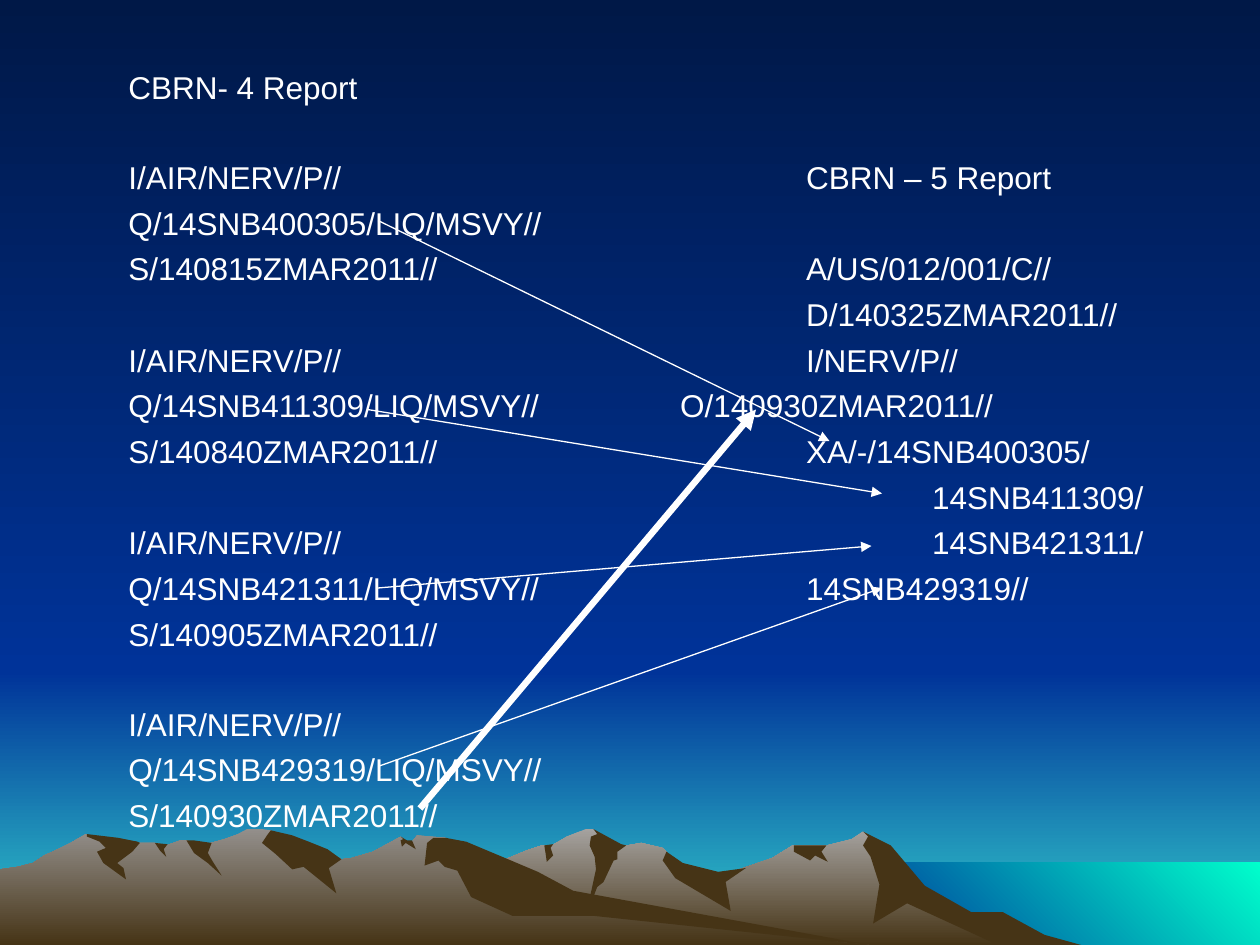
from collections import namedtuple

from lxml.etree import SubElement
from pptx import Presentation
from pptx.dml.color import RGBColor
from pptx.enum.shapes import MSO_CONNECTOR, MSO_SHAPE
from pptx.oxml.ns import qn
from pptx.util import Inches, Pt

Box = namedtuple("Box", "left top width height")

COLORS = {
    "night": "001847",
    "blue": "003399",
    "horizon": "33CCCC",
    "sea": "00FFCC",
    "far_peak": "A5A29F",
    "near_peak": "938F8B",
    "earth": "463416",
    "text": "FFFFFF",
}

DOWN, UP_RIGHT = 270, 45

# Mountain outlines on a grid of 858 columns and 92 rows
MOUNTAIN_COLS, MOUNTAIN_ROWS = 858, 92
FAR_RIDGE = [
    (802, 82), (778, 69), (764, 65), (723, 40), (702, 13), (685, 2), (676, 8), (656, 13),
    (629, 13), (613, 23), (566, 39), (536, 32), (529, 18), (526, 15), (509, 11), (486, 15),
    (474, 3), (471, 0), (465, 0), (450, 6), (438, 13), (430, 13), (418, 17), (394, 27),
    (355, 40), (327, 51), (277, 81), (258, 92), (821, 92),
]
FAR_SHADOWS = [
    [(796, 66), (771, 66), (734, 45), (707, 13), (685, 2), (689, 6), (685, 13), (691, 22),
     (698, 44), (693, 75), (720, 59), (792, 92), (858, 92), (829, 84)],
    [(471, 0), (474, 4), (469, 6), (468, 13), (472, 22), (473, 32), (465, 69), (474, 46),
     (479, 42), (487, 25), (490, 24), (490, 18), (497, 13), (493, 12)],
    [(529, 18), (526, 25), (536, 39), (580, 65), (576, 42), (592, 31), (570, 34), (542, 27)],
    [(650, 13), (630, 13), (630, 18), (643, 25), (647, 21), (657, 26), (652, 18), (656, 13)],
    [(433, 19), (432, 13), (439, 12), (437, 15), (439, 21), (434, 26)],
]
NEAR_RIDGE = [
    (690, 92), (667, 90), (432, 54), (354, 7), (331, 5), (327, 10), (323, 10), (318, 6),
    (296, 18), (279, 23), (271, 24), (260, 18), (236, 23), (223, 5), (215, 1), (208, 0),
    (196, 0), (189, 4), (178, 8), (160, 13), (148, 9), (143, 9), (132, 13), (123, 11),
    (111, 11), (94, 13), (68, 4), (56, 11), (46, 16), (35, 21), (26, 27), (14, 30),
    (0, 32), (0, 92),
]
NEAR_SHADOWS = [
    [(212, 5), (208, 11), (219, 20), (232, 32), (241, 30), (267, 51), (261, 31), (271, 24),
     (260, 16), (245, 10), (232, 5), (215, 1)],
    [(370, 10), (354, 7), (344, 7), (339, 11), (337, 29), (348, 25), (353, 30), (363, 33),
     (374, 54), (407, 69), (472, 69), (690, 92), (455, 49), (427, 34), (401, 23)],
    [(318, 9), (320, 8), (318, 6), (323, 9), (327, 9), (330, 16), (322, 11), (319, 14)],
    [(154, 9), (168, 11), (165, 19), (169, 26), (176, 37), (165, 27), (154, 19), (148, 9)],
    [(133, 12), (130, 16), (132, 22), (127, 17), (123, 11)],
    [(109, 10), (111, 11), (105, 18), (93, 27), (98, 31), (100, 40), (82, 27), (77, 18),
     (84, 15), (79, 10), (69, 6), (69, 4), (94, 7)],
]

# Each row: CBRN-4 entry, CBRN-5 entry, indent level of the latter; None is a gap
REPORT_ROWS = [
    ("CBRN- 4 Report", "", 0),
    None,
    ("I/AIR/NERV/P//", "CBRN – 5 Report", 1),
    ("Q/14SNB400305/LIQ/MSVY//", "", 0),
    ("S/140815ZMAR2011//", "A/US/012/001/C//", 1),
    ("", "D/140325ZMAR2011//", 1),
    ("I/AIR/NERV/P//", "I/NERV/P//", 1),
    ("Q/14SNB411309/LIQ/MSVY//", "O/140930ZMAR2011//", 0),
    ("S/140840ZMAR2011//", "XA/-/14SNB400305/", 1),
    ("", "14SNB411309/", 2),
    ("I/AIR/NERV/P//", "14SNB421311/", 2),
    ("Q/14SNB421311/LIQ/MSVY//", "14SNB429319//", 1),
    ("S/140905ZMAR2011//", "", 0),
    None,
    ("I/AIR/NERV/P//", "", 0),
    ("Q/14SNB429319/LIQ/MSVY//", "", 0),
    ("S/140930ZMAR2011//", "", 0),
]
FIRST_TAB, TAB_STEP = 4.38, 1
ROW_GAP, ROW_PITCH = 4.5, 25.2

# Arrow ends on a grid of 120 columns and 90 rows, with the line width
ARROW_COLS, ARROW_ROWS = 120, 90
ARROWS = [
    ((40, 77), (72, 39), 3.75),
    ((36, 21), (79, 42), 0.75),
    ((35, 39), (84, 47), 0.75),
    ((36, 56), (83, 52), 0.75),
    ((36, 73), (84, 56), 0.75),
]


def rgb(name):
    return RGBColor.from_string(COLORS[name])


def shade(fill, start, end, angle=DOWN):
    fill.gradient()
    fill.gradient_angle = angle
    for stop, name in zip(fill.gradient_stops, (start, end)):
        stop.color.rgb = rgb(name)


def band(slide, box, start, end, angle=DOWN):
    area = slide.shapes.add_shape(MSO_SHAPE.RECTANGLE, *box)
    area.shadow.inherit = False
    area.line.fill.background()
    shade(area.fill, start, end, angle)


def outline(slide, box, points):
    scale = (box.width / MOUNTAIN_COLS, box.height / MOUNTAIN_ROWS)
    builder = slide.shapes.build_freeform(*points[0], scale=scale)
    builder.add_line_segments(points[1:], close=True)
    rock = builder.convert_to_shape(box.left, box.top)
    rock.shadow.inherit = False
    rock.line.fill.background()
    return rock


def draw_sky_and_sea(slide, box):
    horizon = int(box.height * 0.71)
    sea_left, sea_top = int(box.width * 0.683), int(box.height * 0.913)
    shade(slide.background.fill, "night", "blue")
    band(slide, Box(box.left, box.top + horizon, box.width, box.height - horizon),
         "blue", "horizon")
    band(slide, Box(box.left, box.top, box.width, horizon), "night", "blue")
    band(slide, Box(box.left + sea_left, box.top + sea_top,
                    box.width - sea_left, box.height - sea_top),
         "blue", "sea", UP_RIGHT)


def draw_mountains(slide, box):
    for ridge, peak, shadows in ((FAR_RIDGE, "far_peak", FAR_SHADOWS),
                                 (NEAR_RIDGE, "near_peak", NEAR_SHADOWS)):
        shade(outline(slide, box, ridge).fill, peak, "earth")
        for points in shadows:
            shadow = outline(slide, box, points)
            shadow.fill.solid()
            shadow.fill.fore_color.rgb = rgb("earth")


def write_reports(slide, box):
    """Set both reports side by side, the second one at tab stops."""
    frame = slide.shapes.add_textbox(*box).text_frame
    frame.word_wrap = True
    frame.margin_top = Inches(0.29)
    paragraph, gap = frame.paragraphs[0], 0
    for number, row in enumerate(REPORT_ROWS):
        if row is None:
            gap += ROW_PITCH
            continue
        cbrn4, cbrn5, level = row
        if number:
            paragraph = frame.add_paragraph()
        paragraph.text = f"{cbrn4}\t{cbrn5}" if cbrn5 else cbrn4
        paragraph.space_before = Pt(gap)
        gap = ROW_GAP
        font = paragraph.runs[0].font
        font.name, font.size = "Arial", Pt(18)
        font.color.rgb = rgb("text")
        if cbrn5:
            tabs = SubElement(paragraph._p.get_or_add_pPr(), qn("a:tabLst"))
            position = Inches(FIRST_TAB + level * TAB_STEP)
            SubElement(tabs, qn("a:tab"), pos=str(position), algn="l")


def draw_arrows(slide, box):
    def place(point):
        return (box.left + box.width * point[0] // ARROW_COLS,
                box.top + box.height * point[1] // ARROW_ROWS)

    for start, end, width in ARROWS:
        arrow = slide.shapes.add_connector(MSO_CONNECTOR.STRAIGHT, *place(start), *place(end))
        arrow.line.color.rgb = rgb("text")
        arrow.line.width = Pt(width)
        SubElement(arrow.line._get_or_add_ln(), qn("a:tailEnd"), type="triangle")
        SubElement(arrow._element.spPr, qn("a:effectLst"))


def main():
    deck = Presentation()
    deck.slide_width, deck.slide_height = Inches(10), Inches(7.5)
    slide = deck.slides.add_slide(deck.slide_layouts[6])
    page = Box(0, 0, deck.slide_width, deck.slide_height)
    draw_sky_and_sea(slide, page)
    draw_mountains(slide, Box(*map(Inches, (0, 6.58, 8.58, 0.92))))
    write_reports(slide, Box(*map(Inches, (0.92, 0.25, 8.75, 7.25))))
    draw_arrows(slide, page)
    deck.save("out.pptx")


if __name__ == "__main__":
    main()
